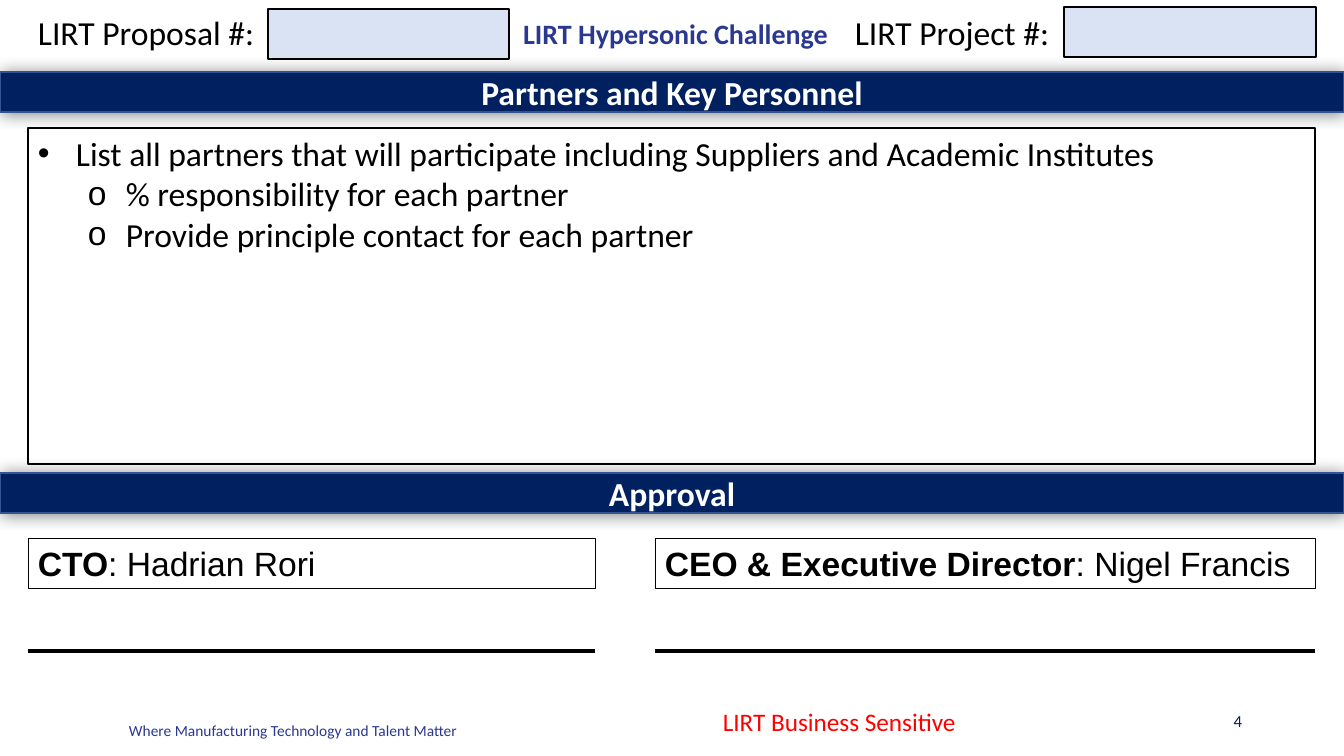
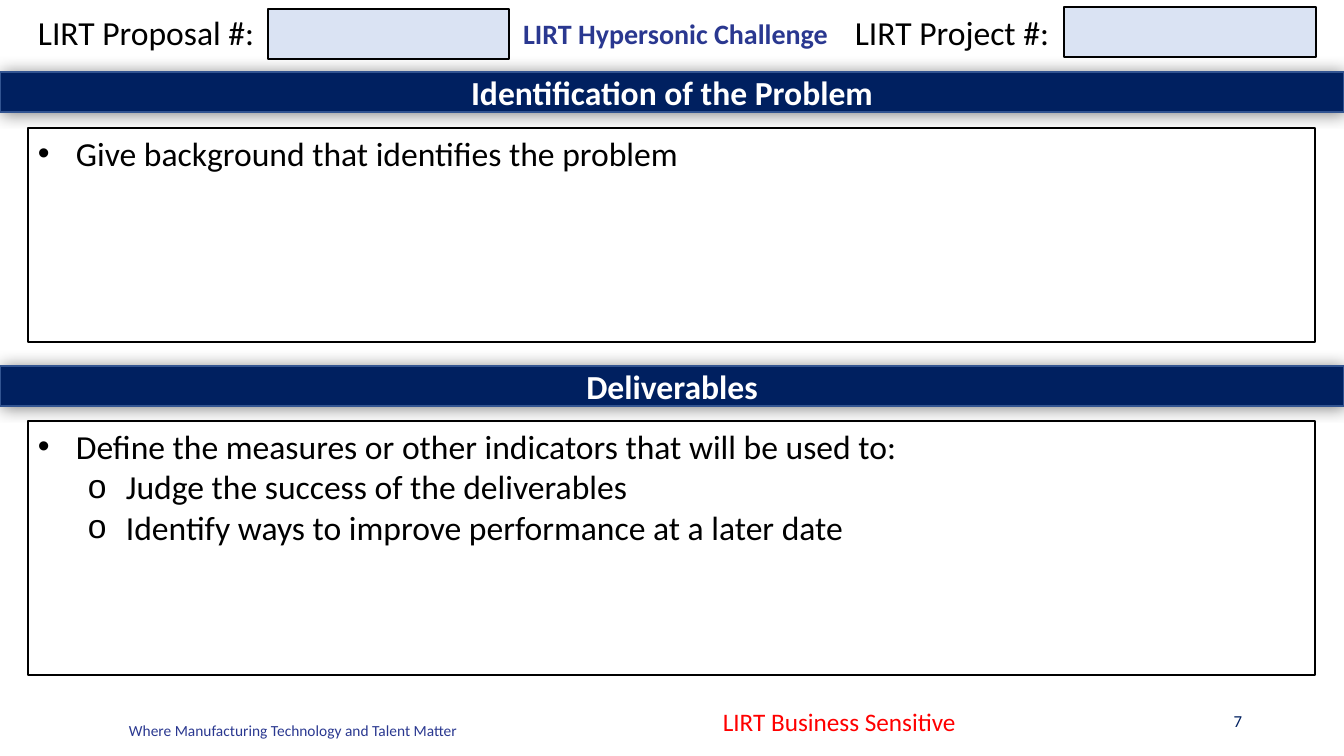
from lxml import etree
from pptx import Presentation
from pptx import util as u
from pptx.dml.color import RGBColor
from pptx.enum import shapes, text
from pptx.oxml.ns import qn

PX = 9525 * 20 / 21  # EMU per px: 1344 px span 13.33 inches
WIDTH, HEIGHT = 1344, 756
LEFT, RIGHT = 28, 1315
BAND_HEIGHT = 40
NAVY, INDIGO, PALE, RED = "002060", "2A3890", "DAE3F3", "FF0000"
BLACK, WHITE, BAND_EDGE = "000000", "FFFFFF", "325491"
BULLETS = ["•", "o"]
INDENTS = [38, 88]
HANGING = 38


def px(*lengths):
    return [u.Emu(round(length * PX)) for length in lengths]


def color(value):
    return RGBColor.from_string(value)


def write(shape, content, size=24, font="Calibri", ink=BLACK, bold=False, lead="",
          align=text.PP_ALIGN.LEFT, anchor=text.MSO_ANCHOR.TOP, spacing=None):
    """Fill a shape with a string or a list of (level, string) bullets; lead is a bold start."""
    frame = shape.text_frame
    frame.word_wrap = True
    frame.vertical_anchor = anchor
    items = [(None, content)] if isinstance(content, str) else content
    for index, (level, words) in enumerate(items):
        paragraph = frame.add_paragraph() if index else frame.paragraphs[0]
        paragraph.alignment = align
        if spacing:
            paragraph.line_spacing = spacing
        if level is not None:
            paragraph.level = level
            properties = paragraph._p.get_or_add_pPr()
            indent, hanging = px(INDENTS[level], HANGING)
            properties.set("marL", str(indent))
            properties.set("indent", str(-hanging))
            etree.SubElement(properties, qn("a:buFont"), typeface="Arial")
            etree.SubElement(properties, qn("a:buChar"), char=BULLETS[level])
        for part, heavy in ((lead, True), (words, bold)):
            if part:
                run = paragraph.add_run()
                run.text = part
                run.font.size = u.Pt(size)
                run.font.name = font
                run.font.bold = heavy
                run.font.color.rgb = color(ink)


deck = Presentation()
deck.slide_width, deck.slide_height = px(WIDTH, HEIGHT)

pages = [
    {"number": "4",
     "bands": [(72, "Partners and Key Personnel"), (473, "Approval")],
     "boxes": [(128, 336, [
         (0, "List all partners that will participate including Suppliers and Academic Institutes"),
         (1, "% responsibility for each partner"),
         (1, "Provide principle contact for each partner")])],
     "signers": [(LEFT, 595, "CTO", ": Hadrian Rori"),
                 (655, RIGHT, "CEO & Executive Director", ": Nigel Francis")]},
    {"number": "7",
     "bands": [(72, "Identification of the Problem"), (366, "Deliverables")],
     "boxes": [(128, 214, [(0, "Give background that identifies the problem")]),
               (421, 254, [
                   (0, "Define the measures or other indicators that will be used to:"),
                   (1, "Judge the success of the deliverables"),
                   (1, "Identify ways to improve performance at a later date")])],
     "signers": []},
]

for page in pages:
    slide = deck.slides.add_slide(deck.slide_layouts[5])

    def rectangle(left, top, width, height, fill=None, edge=BLACK, weight=1):
        box = slide.shapes.add_shape(shapes.MSO_SHAPE.RECTANGLE, *px(left, top, width, height))
        box.shadow.inherit = False
        if fill:
            box.fill.solid()
            box.fill.fore_color.rgb = color(fill)
        else:
            box.fill.background()
        box.line.color.rgb = color(edge)
        box.line.width = u.Pt(weight)
        return box

    title = slide.shapes.title
    title.left, title.top, title.width, title.height = px(513, 15, 638, 73)
    write(title, "LIRT Hypersonic Challenge", size=20, ink=INDIGO, bold=True, spacing=0.9)

    # Content boxes and signature fields
    for top, height, points in page["boxes"]:
        write(rectangle(LEFT, top, RIGHT - LEFT, height), points)
    for left, right, role, person in page["signers"]:
        signer = rectangle(left, 538, right - left, 50, weight=0.25)
        write(signer, person, font="Arial", lead=role)
        signature = slide.shapes.add_connector(
            shapes.MSO_CONNECTOR.STRAIGHT, *px(left, 651, right, 651))
        signature.line.color.rgb = color(BLACK)
        signature.line.width = u.Pt(2.25)
        etree.SubElement(signature._element.spPr, qn("a:effectLst"))

    # Section bands with a soft shadow
    for top, heading in page["bands"]:
        band = rectangle(0, top, WIDTH, BAND_HEIGHT, fill=NAVY, edge=BAND_EDGE)
        effects = band._element.spPr.find(qn("a:effectLst"))
        shadow = etree.SubElement(effects, qn("a:outerShdw"), blurRad=str(px(16)[0]),
                                  dist="0", algn="ctr", rotWithShape="0")
        shade = etree.SubElement(shadow, qn("a:srgbClr"), val=BLACK)
        etree.SubElement(shade, qn("a:alpha"), val="50000")
        write(band, heading, ink=WHITE, bold=True,
              align=text.PP_ALIGN.CENTER, anchor=text.MSO_ANCHOR.MIDDLE)

    # Header fields and footer
    for left, top, width in ((268, 9, 241), (1064, 7, 252)):
        rectangle(left, top, width, 50, fill=PALE)
    for place, words, style in (
        ((28, 7, 241, 50), "LIRT Proposal #:", {}),
        ((845, 7, 217, 50), "LIRT Project #:", {}),
        ((119, 716, 430, 29), "Where Manufacturing Technology and Talent Matter",
         {"size": 11, "ink": INDIGO}),
        ((713, 701, 454, 40), "LIRT Business Sensitive", {"size": 18, "ink": RED}),
        ((950, 701, 302, 40), page["number"],
         {"size": 12, "ink": NAVY, "align": text.PP_ALIGN.RIGHT,
          "anchor": text.MSO_ANCHOR.MIDDLE}),
    ):
        write(slide.shapes.add_textbox(*px(*place)), words, **style)

deck.save("out.pptx")
